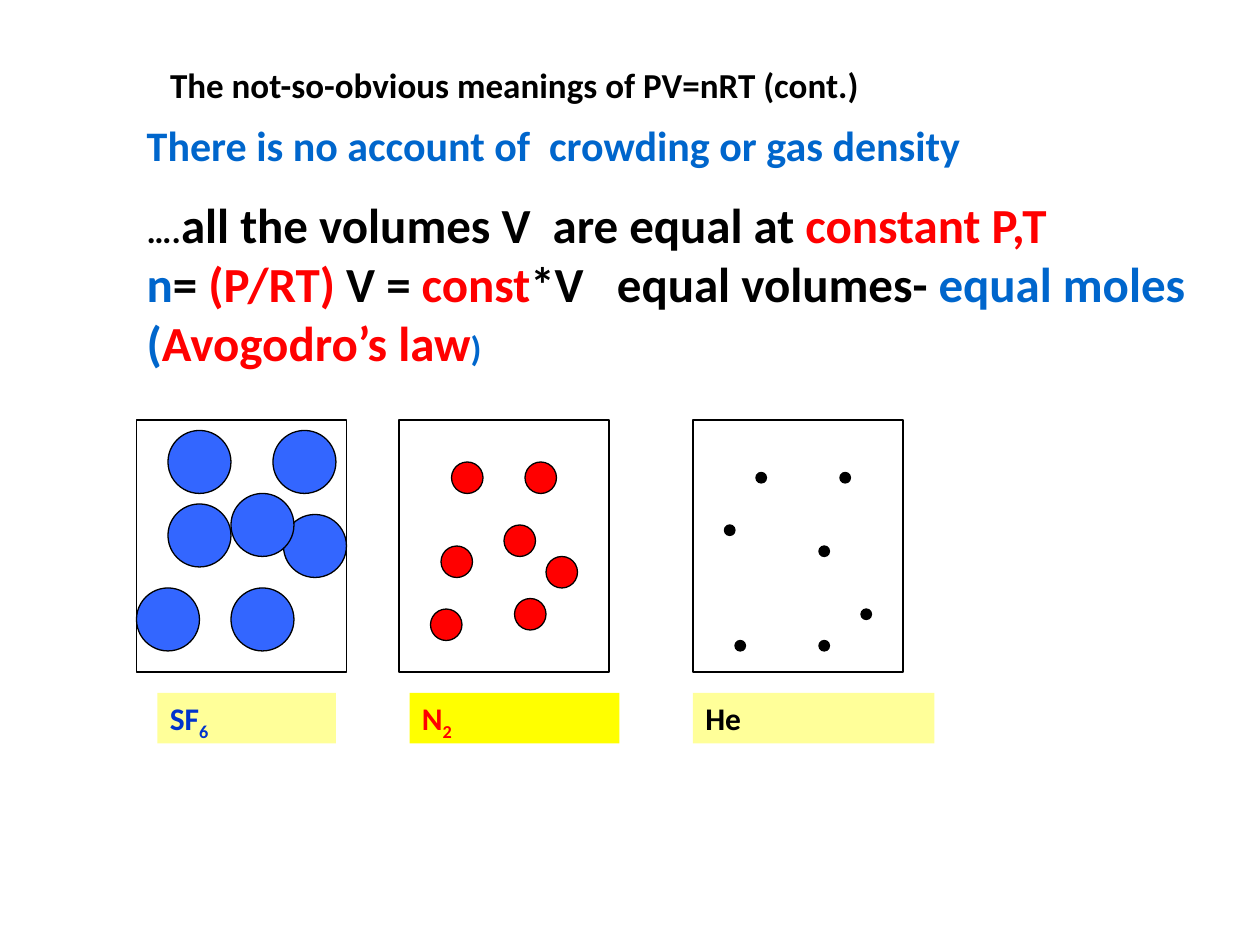
from pptx import Presentation
from pptx.dml.color import RGBColor as RGB
from pptx.enum.shapes import MSO_SHAPE as Kind
from pptx.enum.text import MSO_ANCHOR as Anchor, PP_ALIGN as Align
from pptx.util import Inches, Pt

deck = Presentation()
deck.slide_width, deck.slide_height = Inches(10), Inches(7.5)
slide = deck.slides.add_slide(deck.slide_layouts[6])
shapes = slide.shapes

# The grid has 120 columns and 90 rows
UNIT = deck.slide_width / 120
BLACK, RED, BLUE = "000000", "FF0000", "0066CC"


def draw(kind, col, row, wide, high, fill=None, line=None):
    box = [round(n * UNIT) for n in (col, row, wide, high)]
    shape = shapes.add_shape(kind, *box)
    shape.shadow.inherit = False
    if fill:
        shape.fill.solid()
        shape.fill.fore_color.rgb = RGB.from_string(fill)
    else:
        shape.fill.background()
    if line:
        shape.line.color.rgb = RGB.from_string(line)
        shape.line.width = Pt(0.75)
    else:
        shape.line.fill.background()
    return shape


def write(para, runs, size, color=None, align=Align.LEFT):
    para.alignment = align
    para.font.name, para.font.bold, para.font.size = "Calibri", True, Pt(size)
    if color:
        para.font.color.rgb = RGB.from_string(color)
    for text, tint, *small in runs:
        if text == "\n":
            para.add_line_break()
            continue
        run = para.add_run()
        run.text = text
        run.font.color.rgb = RGB.from_string(tint)
        if small:
            run.font.size = Pt(small[0])
    return para


# Title
title = shapes.add_textbox(*[round(n * UNIT) for n in (-5, 0.5, 108, 15)])
frame = title.text_frame
frame.word_wrap, frame.vertical_anchor = True, Anchor.MIDDLE
write(frame.paragraphs[0],
      [("The not-so-obvious meanings of PV=nRT (cont.)", BLACK)],
      20, BLACK, Align.CENTER)

# Main text
body = shapes.add_textbox(*[round(n * UNIT) for n in (12.8, 10.8, 102, 25.8)])
frame = body.text_frame
frame.word_wrap = True
write(frame.paragraphs[0],
      [("There is no account of  crowding or gas density", BLUE)], 24, BLUE)
claim = write(frame.add_paragraph(), [
    ("….", BLACK, 20),
    ("all the volumes V  are equal at ", BLACK),
    ("constant P,T", RED),
], 28)
claim.space_before = Pt(14)
write(frame.add_paragraph(), [
    ("n", BLUE), ("= ", BLACK), ("(P/RT)", RED), (" V = ", BLACK),
    ("const", RED), ("*V   equal volumes- ", BLACK), ("equal moles", BLUE),
    ("\n", BLUE),
    ("(", BLUE), ("Avogodro’s law", RED), (")", BLUE, 20),
], 28)

# Gas boxes: left column, ball size, ball colour, ball places
gases = [
    (13, 6, "3366FF", [(22, 56), (27, 49), (16, 41), (26, 41),
                       (16, 48), (22, 47), (13, 56)]),
    (38, 3, RED, [(41, 58), (48, 50), (52, 53), (49, 57),
                  (42, 52), (50, 44), (43, 44)]),
    (66, 1, BLACK, [(70, 61), (78, 61), (69, 50), (80, 45),
                    (78, 52), (82, 58), (72, 45)]),
]
for left, size, fill, balls in gases:
    draw(Kind.RECTANGLE, left, 40, 20, 24, line=BLACK)
    for col, row in balls:
        draw(Kind.OVAL, col, row, size, size, fill, BLACK)

# Labels: left column, width, fill, symbol, subscript, colour
labels = [
    (15, 17, "FFFF99", "SF", "6", "0033CC"),
    (39, 20, "FFFF00", "N", "2", RED),
    (66, 23, "FFFF99", "He", "", BLACK),
]
for left, wide, fill, name, sub, color in labels:
    label = draw(Kind.RECTANGLE, left, 66, wide, 4.8, fill)
    frame = label.text_frame
    frame.vertical_anchor = Anchor.TOP
    runs = [(part, color) for part in (name, sub) if part]
    para = write(frame.paragraphs[0], runs, 18, color)
    for run in para.runs[1:]:
        run.font._element.set("baseline", "-25000")

deck.save("out.pptx")
